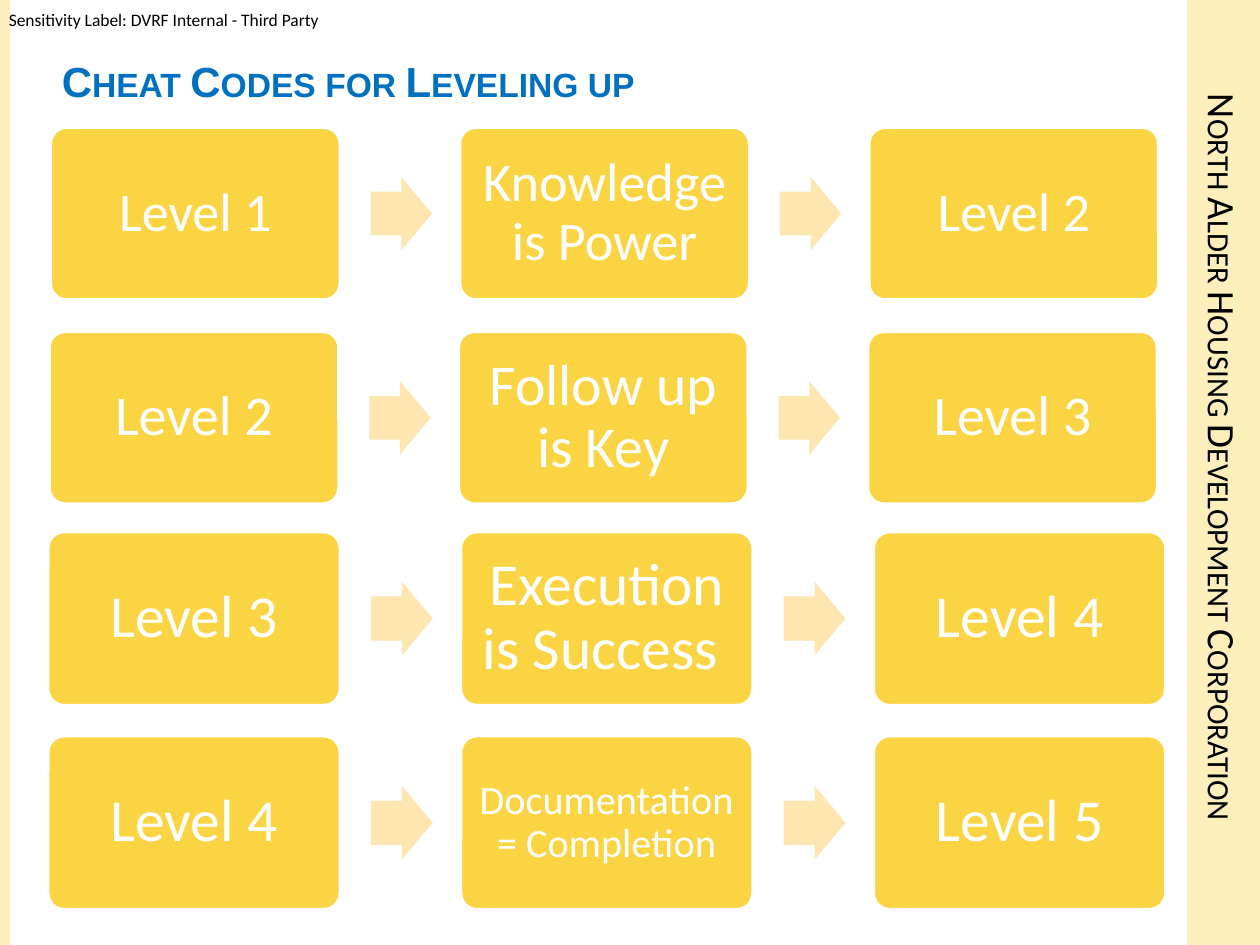
from pptx import Presentation
from pptx.dml.color import RGBColor
from pptx.enum import shapes, text
from pptx.util import Inches, Pt


def paint(target, color):
    target.solid()
    target.fore_color.rgb = RGBColor.from_string(color)


def write(shape, words, size, color="000000", font="Calibri", bold=False, caps=False,
          align=text.PP_ALIGN.LEFT, anchor=text.MSO_ANCHOR.TOP, inset=0, spacing=1.0, wrap=True):
    frame = shape.text_frame
    frame.word_wrap = wrap
    frame.vertical_anchor = anchor
    frame.margin_left = frame.margin_right = Inches(inset)
    frame.margin_top = frame.margin_bottom = Inches(inset)
    paragraph = frame.paragraphs[0]
    paragraph.alignment = align
    paragraph.line_spacing = spacing
    run = paragraph.add_run()
    run.text = words
    run.font.name = font
    run.font.size = Pt(size)
    run.font.bold = bold
    paint(run.font.fill, color)
    if caps:
        run.font._element.set("cap", "small")


deck = Presentation()
deck.slide_width, deck.slide_height = Inches(10), Inches(7.5)
slide = deck.slides.add_slide(deck.slide_layouts[6])

for left, width in [(9.42, 0.58), (0, 0.08)]:
    band = slide.shapes.add_shape(
        shapes.MSO_SHAPE.RECTANGLE, Inches(left), 0, Inches(width), Inches(7.5))
    band.shadow.inherit = False
    paint(band.fill, "FCEFBC")
    band.line.fill.background()

sensitivity = slide.shapes.add_textbox(Inches(0.07), Inches(0.07), Inches(2.46), Inches(0.17))
write(sensitivity, "Sensitivity Label: DVRF Internal - Third Party", 10, wrap=False)

organization = slide.shapes.add_textbox(Inches(9.42), Inches(0.42), Inches(0.58), Inches(6.42))
write(organization, "North Alder Housing Development Corporation", 22.2, caps=True,
      align=text.PP_ALIGN.CENTER, anchor=text.MSO_ANCHOR.MIDDLE, inset=0.05)
organization.text_frame._txBody.bodyPr.set("vert", "vert")

title = slide.shapes.add_textbox(Inches(0.49), Inches(0.44), Inches(8.91), Inches(1.02))
write(title, "Cheat Codes for Leveling up", 24, "0070C0", font="Arial", bold=True, caps=True)

levels = [
    (0.39, 1, 2.32, 1.39, [("Level 1", 31), ("Knowledge is Power", 31), ("Level 2", 31)]),
    (0.38, 2.62, 2.32, 1.39, [("Level 2", 32), ("Follow up is Key", 33), ("Level 3", 32)]),
    (0.37, 4.21, 2.34, 1.4, [("Level 3", 34), ("Execution is Success ", 34), ("Level 4", 34)]),
    (0.37, 5.83, 2.34, 1.4, [("Level 4", 34), ("Documentation = Completion", 23), ("Level 5", 34)]),
]
for row_left, top, width, height, steps in levels:
    row = slide.shapes.add_group_shape()
    arrow_width, arrow_height = 0.21 * width, 0.25 * width
    for column, (words, size) in enumerate(steps):
        left = row_left + column * 1.4 * width
        step = row.shapes.add_shape(shapes.MSO_SHAPE.ROUNDED_RECTANGLE, Inches(left),
                                    Inches(top), Inches(width), Inches(height))
        step.adjustments[0] = 0.1
        step.shadow.inherit = False
        paint(step.fill, "FBD443")
        paint(step.line.fill, "FFFFFF")
        step.line.width = Pt(3.35)
        write(step, words, size, "FFFFFF", align=text.PP_ALIGN.CENTER,
              anchor=text.MSO_ANCHOR.MIDDLE, inset=0.1 if size > 30 else 0.06, spacing=0.9)
        if column < len(steps) - 1:
            arrow = row.shapes.add_shape(
                shapes.MSO_SHAPE.RIGHT_ARROW, Inches(left + 1.1 * width),
                Inches(top + (height - arrow_height) / 2), Inches(arrow_width), Inches(arrow_height))
            arrow.adjustments[0] = 0.6
            arrow.adjustments[1] = 0.5
            arrow.shadow.inherit = False
            paint(arrow.fill, "FDE6B0")
            arrow.line.fill.background()

deck.save("out.pptx")
